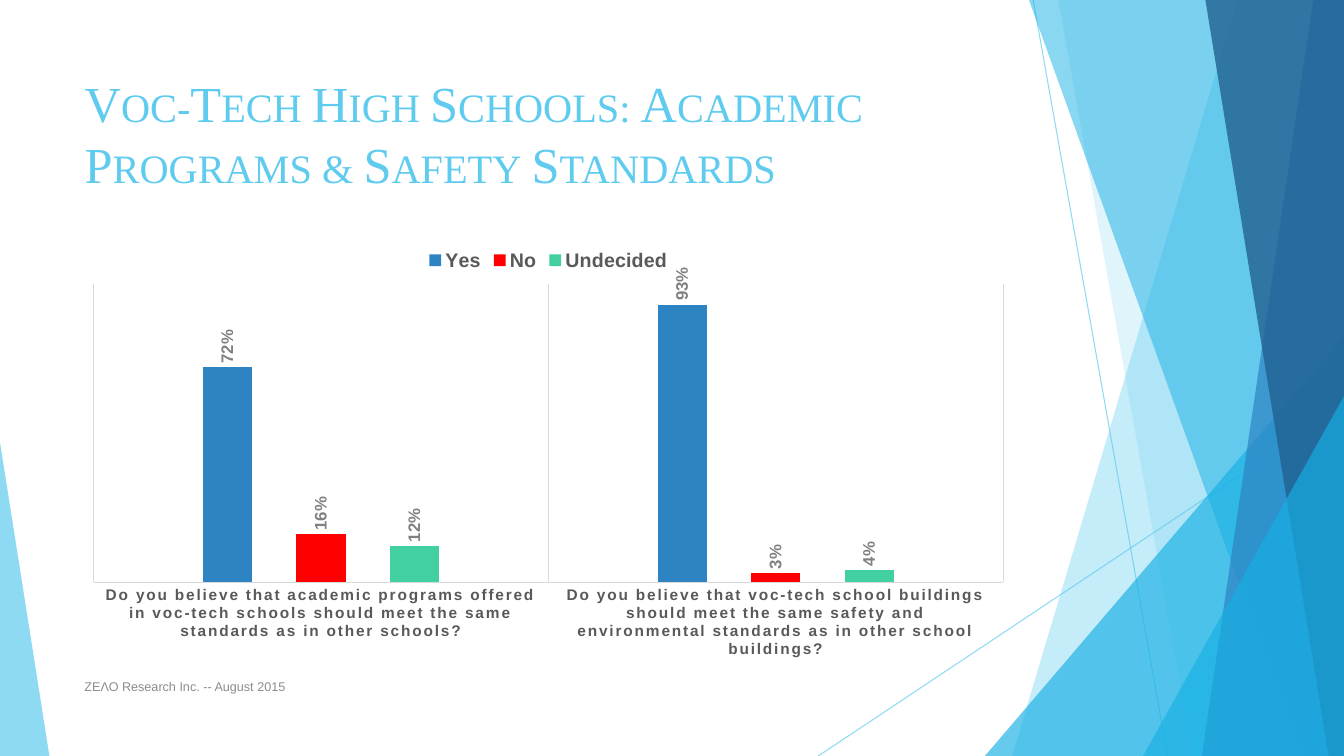
import pptx
import pptx.util
import pptx.chart.data
import pptx.dml.color
import pptx.enum.chart
import pptx.enum.shapes
import pptx.enum.text
import pptx.oxml
import pptx.oxml.ns

Pt = pptx.util.Pt
qn = pptx.oxml.ns.qn

WIDTH, HEIGHT = 960, 540
MARGIN, CONTENT_WIDTH = 53.3, 676.8
TITLE = "Voc-Tech High Schools: Academic Programs & Safety Standards"
SOURCE = "ΖΕΛΟ Research Inc. -- August 2015"
QUESTIONS = [
    "Do you believe that academic programs offered in voc-tech schools "
    "should meet the same standards as in other schools?",
    "Do you believe that voc-tech school buildings should meet the same safety "
    "and environmental standards as in other school buildings?",
]
ANSWERS = [
    ("Yes", (0.72, 0.93), "2E83C3"),
    ("No", (0.16, 0.03), "FF0000"),
    ("Undecided", (0.12, 0.04), "42D0A2"),
]
PLOT_AREA = {"x": 0.02, "y": 0.108, "w": 0.96, "h": 0.698}
RAYS = [((738, 0), (834, HEIGHT)), ((WIDTH, 290), (584.5, HEIGHT))]
FACETS = [
    ("band", 884, 723, "5FCBEF", 36),
    ("band", 756, 852, "5FCBEF", 20),
    ("peak", 703.5, 240, "17B0E4", 66),
    ("band", 735, 929.5, "17B0E4", 50),
    ("band", 938, 858.5, "2E83C3", 70),
    ("band", 861, 949, "226292", 80),
    ("peak", 816.5, 283, "17B0E4", 66),
]
LEFT_PEAK = (0, 316, 35.3, "5FCBEF", 70)


def rgb(color):
    return pptx.dml.color.RGBColor.from_string(color)


def set_font(font, size, color, name="Arial", bold=False):
    font.size, font.name, font.bold = Pt(size), name, bold
    font.color.rgb = rgb(color)


def set_alpha(parent, percent):
    for color in parent.iter(qn("a:srgbClr")):
        alpha = pptx.oxml.parse_xml(
            f'<a:alpha {pptx.oxml.ns.nsdecls("a")} val="{percent * 1000}"/>')
        color.append(alpha)


def paint(facet, color, percent):
    facet.shadow.inherit = False
    facet.fill.solid()
    facet.fill.fore_color.rgb = rgb(color)
    facet.line.fill.background()
    set_alpha(facet.element.spPr, percent)


def add_peak(shapes, left, top, width, lean):
    peak = shapes.add_shape(
        pptx.enum.shapes.MSO_SHAPE.ISOSCELES_TRIANGLE,
        Pt(left), Pt(top), Pt(width), Pt(HEIGHT - top))
    peak.adjustments[0] = lean
    return peak


def add_band(shapes, top_x, foot_x):
    outline = shapes.build_freeform(Pt(top_x), 0, scale=1.0)
    corners = [(WIDTH, 0), (WIDTH, HEIGHT), (foot_x, HEIGHT)]
    outline.add_line_segments([(Pt(x), Pt(y)) for x, y in corners], close=True)
    return outline.convert_to_shape()


def add_backdrop(shapes):
    for start, end in RAYS:
        ray = shapes.add_connector(
            pptx.enum.shapes.MSO_CONNECTOR.STRAIGHT,
            *(Pt(value) for value in start + end))
        ray.line.width = Pt(0.75)
        ray.line.color.rgb = rgb("5FCBEF")
        set_alpha(ray.element.spPr, 70)
        ray.element.spPr.append(pptx.oxml.parse_xml(
            f'<a:effectLst {pptx.oxml.ns.nsdecls("a")}/>'))
    for kind, first, second, color, percent in FACETS:
        if kind == "band":
            facet = add_band(shapes, first, second)
        else:
            facet = add_peak(shapes, first, second, WIDTH - first, 1)
        paint(facet, color, percent)
    left, top, width, color, percent = LEFT_PEAK
    paint(add_peak(shapes, left, top, width, 0), color, percent)


def add_title(title):
    title.left, title.top = Pt(MARGIN), Pt(48)
    title.width, title.height = Pt(CONTENT_WIDTH), Pt(104)
    frame = title.text_frame
    frame.text = TITLE
    frame.word_wrap = True
    frame.auto_size = pptx.enum.text.MSO_AUTO_SIZE.NONE
    frame.vertical_anchor = pptx.enum.text.MSO_ANCHOR.TOP
    heading = frame.paragraphs[0]
    heading.alignment = pptx.enum.text.PP_ALIGN.LEFT
    set_font(heading.font, 36, "5FCBEF", "Times New Roman")
    for properties in title.element.iter(qn("a:defRPr")):
        properties.set("cap", "small")


def add_survey_chart(shapes):
    survey = pptx.chart.data.CategoryChartData(number_format="0%")
    survey.categories = QUESTIONS
    for answer, shares, color in ANSWERS:
        survey.add_series(answer, shares)
    chart = shapes.add_chart(
        pptx.enum.chart.XL_CHART_TYPE.COLUMN_CLUSTERED,
        Pt(MARGIN), Pt(170), Pt(CONTENT_WIDTH), Pt(305), survey).chart
    set_font(chart.font, 10, "000000")
    chart.has_title = False
    chart.has_legend = True
    chart.legend.position = pptx.enum.chart.XL_LEGEND_POSITION.TOP
    chart.legend.include_in_layout = False
    set_font(chart.legend.font, 14, "595959", bold=True)

    shares_axis = chart.value_axis
    shares_axis.minimum_scale, shares_axis.maximum_scale = 0, 1
    shares_axis.has_major_gridlines = False
    shares_axis.visible = False

    question_axis = chart.category_axis
    question_axis.major_tick_mark = pptx.enum.chart.XL_TICK_MARK.NONE
    question_axis.has_major_gridlines = True
    for rule in (question_axis.format.line, question_axis.major_gridlines.format.line):
        rule.width = Pt(0.75)
        rule.color.rgb = rgb("D9D9D9")
    set_font(question_axis.tick_labels.font, 11, "595959", bold=True)
    for properties in question_axis.tick_labels.font._element.iter(qn("a:defRPr")):
        properties.set("spc", "120")

    plot = chart.plots[0]
    plot.vary_by_categories = False
    plot.gap_width, plot.overlap = 444, -90
    for series, (answer, shares, color) in zip(plot.series, ANSWERS):
        series.format.fill.solid()
        series.format.fill.fore_color.rgb = rgb(color)
        labels = series.data_labels
        labels.show_value = True
        labels.number_format, labels.number_format_is_linked = "0%", False
        labels.position = pptx.enum.chart.XL_LABEL_POSITION.OUTSIDE_END
        set_font(labels.font, 12, "808080", bold=True)
        for body in series._element.iter(qn("a:bodyPr")):
            body.set("rot", "-5400000")
            body.set("vert", "horz")

    plot_area = chart._chartSpace.chart.plotArea
    for layout in plot_area.findall(qn("c:layout")):
        plot_area.remove(layout)
    sizes = "".join(f'<c:{key} val="{value}"/>' for key, value in PLOT_AREA.items())
    plot_area.insert(0, pptx.oxml.parse_xml(
        f'<c:layout {pptx.oxml.ns.nsdecls("c")}><c:manualLayout>'
        '<c:layoutTarget val="inner"/><c:xMode val="edge"/><c:yMode val="edge"/>'
        f'{sizes}</c:manualLayout></c:layout>'))


def add_source(shapes):
    frame = shapes.add_textbox(Pt(MARGIN), Pt(476), Pt(496), Pt(28.8)).text_frame
    frame.word_wrap = True
    frame.vertical_anchor = pptx.enum.text.MSO_ANCHOR.MIDDLE
    frame.text = SOURCE
    set_font(frame.paragraphs[0].font, 9, "8C8C8C")


def main():
    deck = pptx.Presentation()
    deck.slide_width, deck.slide_height = Pt(WIDTH), Pt(HEIGHT)
    slide = deck.slides.add_slide(deck.slide_layouts[5])
    add_backdrop(slide.shapes)
    add_title(slide.shapes.title)
    add_survey_chart(slide.shapes)
    add_source(slide.shapes)
    deck.save("out.pptx")


if __name__ == "__main__":
    main()
